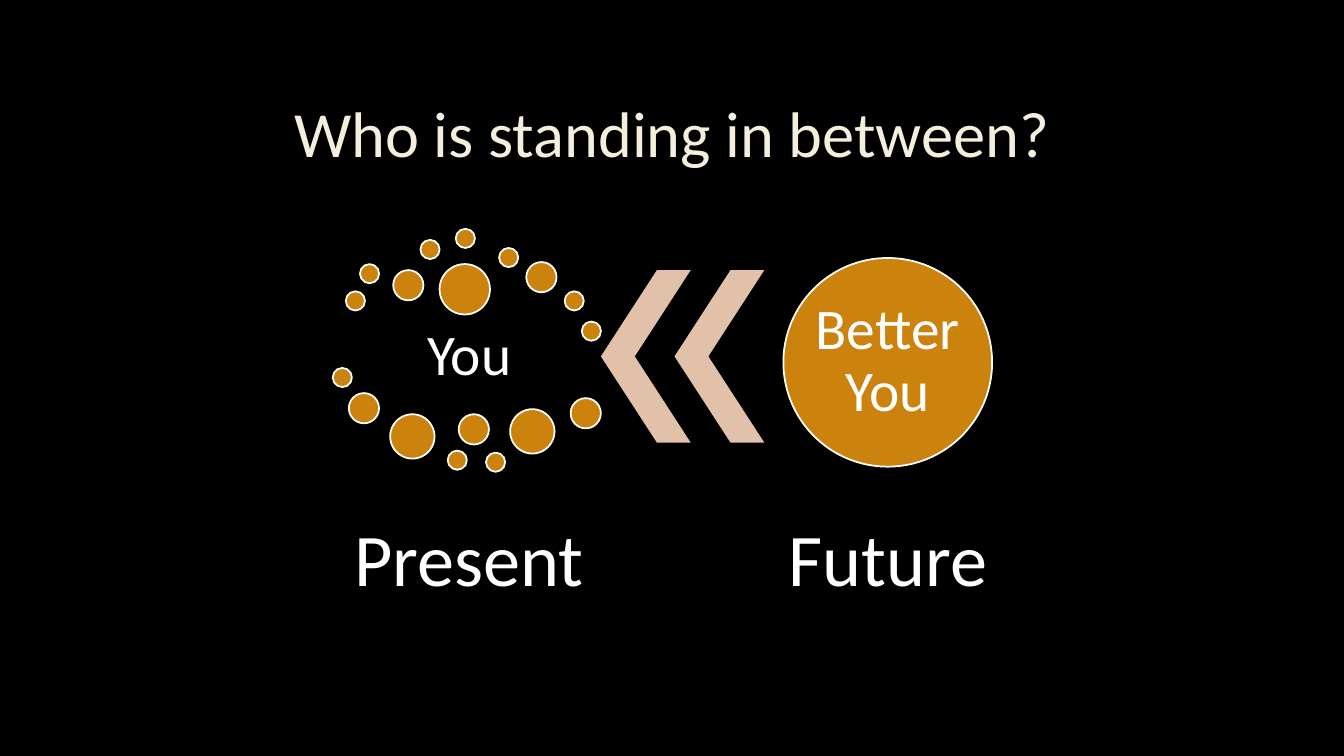
from lxml import etree
from pptx import Presentation
from pptx.dml.color import RGBColor
from pptx.enum import shapes, text
from pptx.oxml import parse_xml
from pptx.util import Inches, Pt

GOLD, WHITE, PEACH, CREAM = "CC830E", "FFFFFF", "E2C1AB", "F4EEDC"
SMALL, MID, LARGE, HUGE = 0.19, 0.3, 0.44, 0.5
DOTS = {
    SMALL: [(3.43, 2.89), (3.57, 2.62), (4.17, 2.38), (4.52, 2.27),
            (4.95, 2.46), (5.6, 2.89), (5.77, 3.19), (3.3, 3.65),
            (4.44, 4.47), (4.82, 4.49)],
    MID: [(3.9, 2.68), (5.22, 2.6), (3.46, 3.9), (4.55, 4.11), (5.66, 3.95)],
    LARGE: [(3.87, 4.11), (5.06, 4.06)],
    HUGE: [(4.36, 2.62)],
}
OUTLINE = (
    '<a:ln xmlns:a="http://schemas.openxmlformats.org/drawingml/2006/main" '
    'w="9525"><a:solidFill><a:srgbClr val="404040"><a:alpha val="10000"/>'
    '</a:srgbClr></a:solidFill></a:ln>'
)


def paint(fill, color):
    """Make a fill solid in a hex colour."""
    fill.solid()
    fill.fore_color.rgb = RGBColor.from_string(color)


def write(shape, words, size, color, inset=None):
    """Put one centred run into a shape and return the run."""
    frame = shape.text_frame
    frame.word_wrap = True
    frame.auto_size = text.MSO_AUTO_SIZE.NONE
    frame.vertical_anchor = text.MSO_ANCHOR.MIDDLE
    if inset is not None:
        frame.margin_left = frame.margin_right = Inches(inset)
        frame.margin_top = frame.margin_bottom = Inches(inset)
    para = frame.paragraphs[0]
    para.alignment = text.PP_ALIGN.CENTER
    para.line_spacing = 0.9
    run = para.add_run()
    run.text = words
    run.font.name = "Calibri"
    run.font.size = Pt(size)
    paint(run.font.fill, color)
    return run


def title(slide, words):
    """Place and format the title placeholder."""
    shape = slide.shapes.title
    shape.left, shape.top = Inches(1), Inches(0.67)
    shape.width, shape.height = Inches(11.32), Inches(1.38)
    run = write(shape, words, 46, CREAM)
    run.font._element.insert(0, parse_xml(OUTLINE))


def label(slide, words, box, size, inset):
    """Add a white text box."""
    shape = slide.shapes.add_textbox(*map(Inches, box))
    write(shape, words, size, WHITE, inset)


def circle(slide, left, top, size):
    """Add a gold circle with a white rim."""
    shape = slide.shapes.add_shape(
        shapes.MSO_SHAPE.OVAL, *map(Inches, (left, top, size, size)))
    shape.shadow.inherit = False
    paint(shape.fill, GOLD)
    paint(shape.line.fill, WHITE)
    shape.line.width = Pt(1.25)


def chevron(slide, left):
    """Add a chevron that points left."""
    shape = slide.shapes.add_shape(
        shapes.MSO_SHAPE.CHEVRON, *map(Inches, (left, 2.68, 0.89, 1.71)))
    shape.shadow.inherit = False
    shape.adjustments[0] = 0.623
    shape.rotation = 180
    paint(shape.fill, PEACH)
    shape.line.fill.background()


def main():
    """Build and save the slide."""
    deck = Presentation()
    deck.slide_width, deck.slide_height = Inches(13.33), Inches(7.5)
    slide = deck.slides.add_slide(deck.slide_layouts[5])
    paint(slide.background.fill, "000000")
    title(slide, "Who is standing in between?")
    label(slide, "You", (3.44, 3.14, 2.43, 0.8), 41, 0.06)
    label(slide, "Present", (3.44, 4.83, 2.43, 1.5), 53, 0.07)
    for size, spots in DOTS.items():
        for left, top in spots:
            circle(slide, left, top, size)
    for left in (5.96, 6.69):
        chevron(slide, left)
    circle(slide, 7.77, 2.56, 2.07)
    label(slide, "Better You", (8.07, 2.86, 1.47, 1.47), 41, 0)
    label(slide, "Future", (7.59, 4.83, 2.44, 1.5), 53, 0.07)
    deck.save("out.pptx")


if __name__ == "__main__":
    main()
